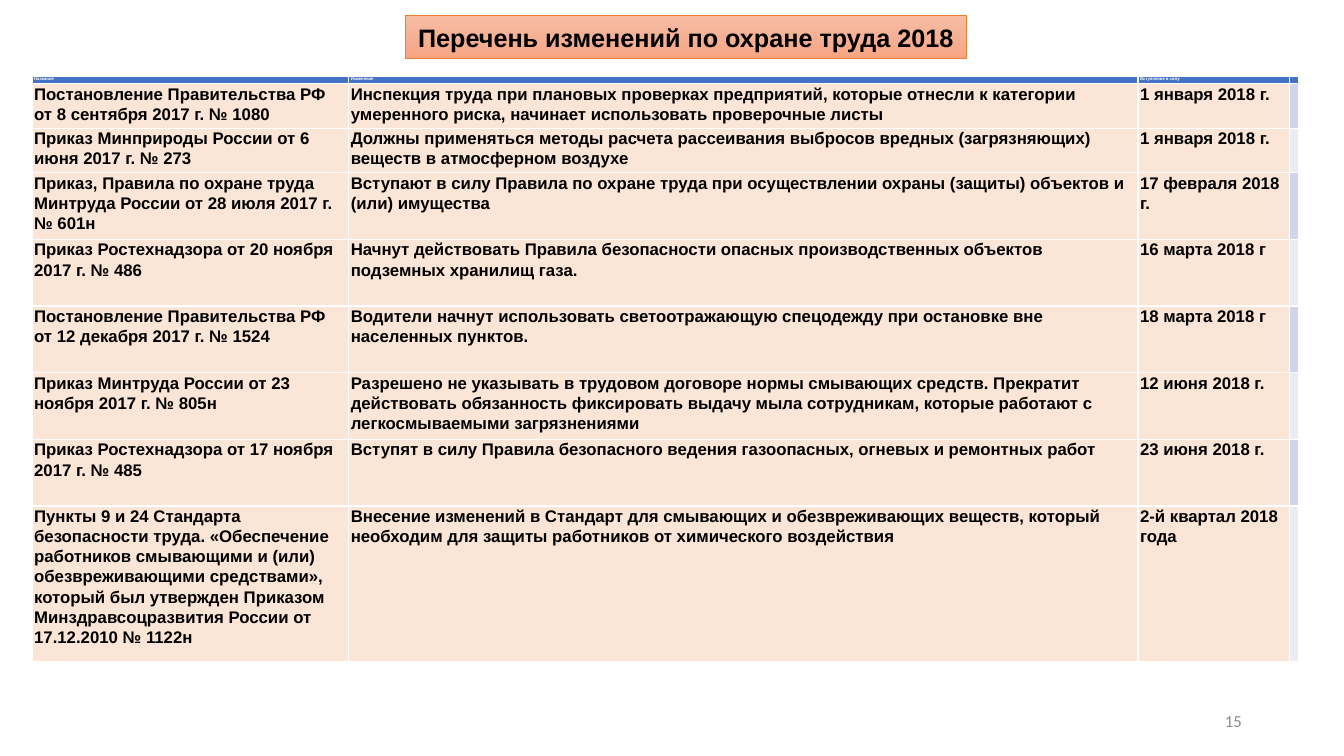
from copy import deepcopy
from lxml import etree
from pptx import Presentation, util as u
from pptx.dml.color import RGBColor
from pptx.enum import shapes, text
from pptx.oxml.ns import qn

# Content
TITLE = "Перечень изменений по охране труда 2018"
PAGE = "15"
HEAD = ("Название", "Изменение", "Вступление в силу", "")
ACTS = [
    ("Постановление Правительства РФ от 8 сентября 2017 г. № 1080",
     "Инспекция труда при плановых проверках предприятий, которые отнесли к категории "
     "умеренного риска, начинает использовать проверочные листы",
     "1 января 2018 г."),
    ("Приказ Минприроды России от 6 июня 2017 г. № 273",
     "Должны применяться методы расчета рассеивания выбросов вредных (загрязняющих) "
     "веществ в атмосферном воздухе",
     "1 января 2018 г."),
    ("Приказ, Правила по охране труда Минтруда России от 28 июля 2017 г. № 601н",
     "Вступают в силу Правила по охране труда при осуществлении охраны (защиты) "
     "объектов и (или) имущества",
     "17 февраля 2018 г."),
    ("Приказ Ростехнадзора от 20 ноября 2017 г. № 486",
     "Начнут действовать Правила безопасности опасных производственных объектов "
     "подземных хранилищ газа.",
     "16 марта 2018 г"),
    ("Постановление Правительства РФ от 12 декабря 2017 г. № 1524",
     "Водители начнут использовать светоотражающую спецодежду при остановке вне "
     "населенных пунктов.",
     "18 марта 2018 г"),
    ("Приказ Минтруда России от 23 ноября 2017 г. № 805н",
     "Разрешено не указывать в трудовом договоре нормы смывающих средств. Прекратит "
     "действовать обязанность фиксировать выдачу мыла сотрудникам, которые работают с "
     "легкосмываемыми загрязнениями",
     "12 июня 2018 г."),
    ("Приказ Ростехнадзора от 17 ноября 2017 г. № 485",
     "Вступят в силу Правила безопасного ведения газоопасных‚ огневых и ремонтных работ",
     "23 июня 2018 г."),
    ("Пункты 9 и 24 Стандарта безопасности труда. «Обеспечение работников смывающими и "
     "(или) обезвреживающими средствами», который был утвержден Приказом "
     "Минздравсоцразвития России от 17.12.2010 № 1122н",
     "Внесение изменений в Стандарт для смывающих и обезвреживающих веществ, который "
     "необходим для защиты работников от химического воздействия",
     "2-й квартал 2018 года"),
]
HUES = {"head": "4472C4", "body": "FBE5D6", "odd": "CFD5EA", "even": "E9EBF5",
        "white": "FFFFFF", "black": "000000", "grey": "8C8C8C", "edge": "ED7D31"}
GLOW = [(0, "F7BDA5"), (0.5, "F5B196"), (1, "F8A582")]
COLS = [7.98, 19.89, 3.81, 0.23]
ROWS = [0.18] + [1.12] * 2 + [1.68] * 5 + [3.91]
LEAD = 1.07


def hue(name):
    return RGBColor.from_string(HUES[name])


def write(para, words, size, name, bold=True, face="Arial"):
    run = para.add_run()
    run.text = words
    run.font.size, run.font.bold, run.font.name = u.Pt(size), bold, face
    run.font.color.rgb = hue(name)


deck = Presentation()
deck.slide_width, deck.slide_height = u.Cm(33.87), u.Cm(19.05)
slide = deck.slides.add_slide(deck.slide_layouts[6])

# Page number
box = slide.shapes.add_textbox(u.Cm(23.93), u.Cm(17.65), u.Cm(7.62), u.Cm(1.02))
frame = box.text_frame
frame.word_wrap = True
frame.vertical_anchor = text.MSO_ANCHOR.MIDDLE
frame.paragraphs[0].alignment = text.PP_ALIGN.RIGHT
write(frame.paragraphs[0], PAGE, 12, "grey", False, "Calibri")

# Title plate
plate = slide.shapes.add_shape(shapes.MSO_SHAPE.RECTANGLE,
                               u.Cm(10.21), u.Cm(0.38), u.Cm(14.15), u.Cm(1.09))
plate.shadow.inherit = False
plate.line.color.rgb = hue("edge")
plate.line.width = u.Pt(0.5)
plate.fill.gradient()
plate.fill.gradient_angle = 270
first = plate._element.spPr.find(".//" + qn("a:gs"))
first.addnext(deepcopy(first))
for stop, (place, tint) in zip(plate.fill.gradient_stops, GLOW):
    stop.position = place
    stop.color.rgb = RGBColor.from_string(tint)
frame = plate.text_frame
frame.word_wrap = False
frame.auto_size = text.MSO_AUTO_SIZE.SHAPE_TO_FIT_TEXT
para = frame.paragraphs[0]
para.alignment = text.PP_ALIGN.CENTER
para.line_spacing, para.space_after = LEAD, u.Pt(8)
write(para, TITLE, 18, "black")

# Table of acts, with a narrow banded strip as the last column
grid = slide.shapes.add_table(len(ROWS), len(COLS), u.Cm(0.81), u.Cm(1.93),
                              u.Cm(sum(COLS)), u.Cm(sum(ROWS))).table
for col, wide in zip(grid.columns, COLS):
    col.width = u.Cm(wide)
for row, tall in zip(grid.rows, ROWS):
    row.height = u.Cm(tall)
for r, line in enumerate([HEAD] + [act + ("",) for act in ACTS]):
    size, ink = (12, "black") if r else (3, "white")
    for c, words in enumerate(line):
        cell = grid.cell(r, c)
        cell.margin_left = cell.margin_right = u.Cm(0.05)
        cell.margin_top = cell.margin_bottom = 0
        band = "odd" if r % 2 else "even"
        cell.fill.solid()
        cell.fill.fore_color.rgb = hue("head" if r == 0 else "body" if words else band)
        para = cell.text_frame.paragraphs[0]
        para.line_spacing = LEAD
        if words:
            write(para, words, size, ink)
        else:
            # Keep the empty cell from stretching its row
            etree.SubElement(para._p, qn("a:endParaRPr"), sz=str(size * 100))

deck.save("out.pptx")
